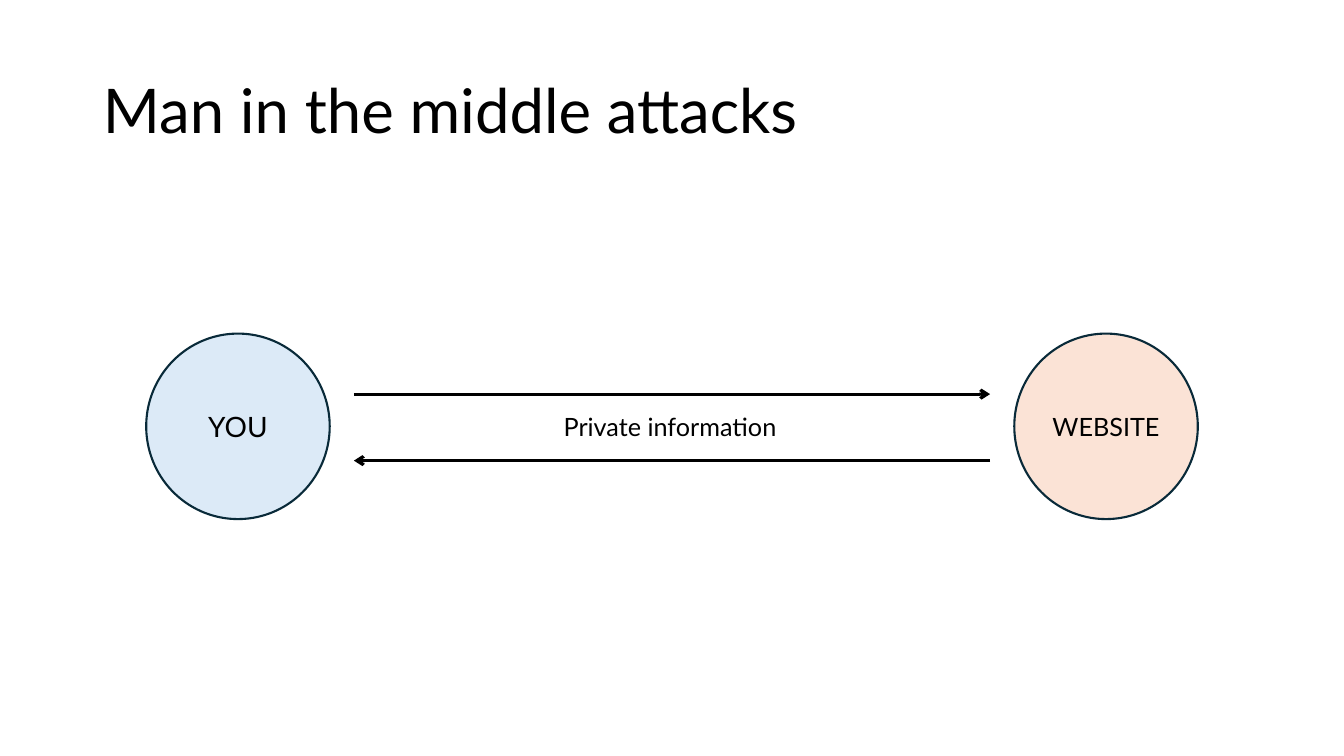
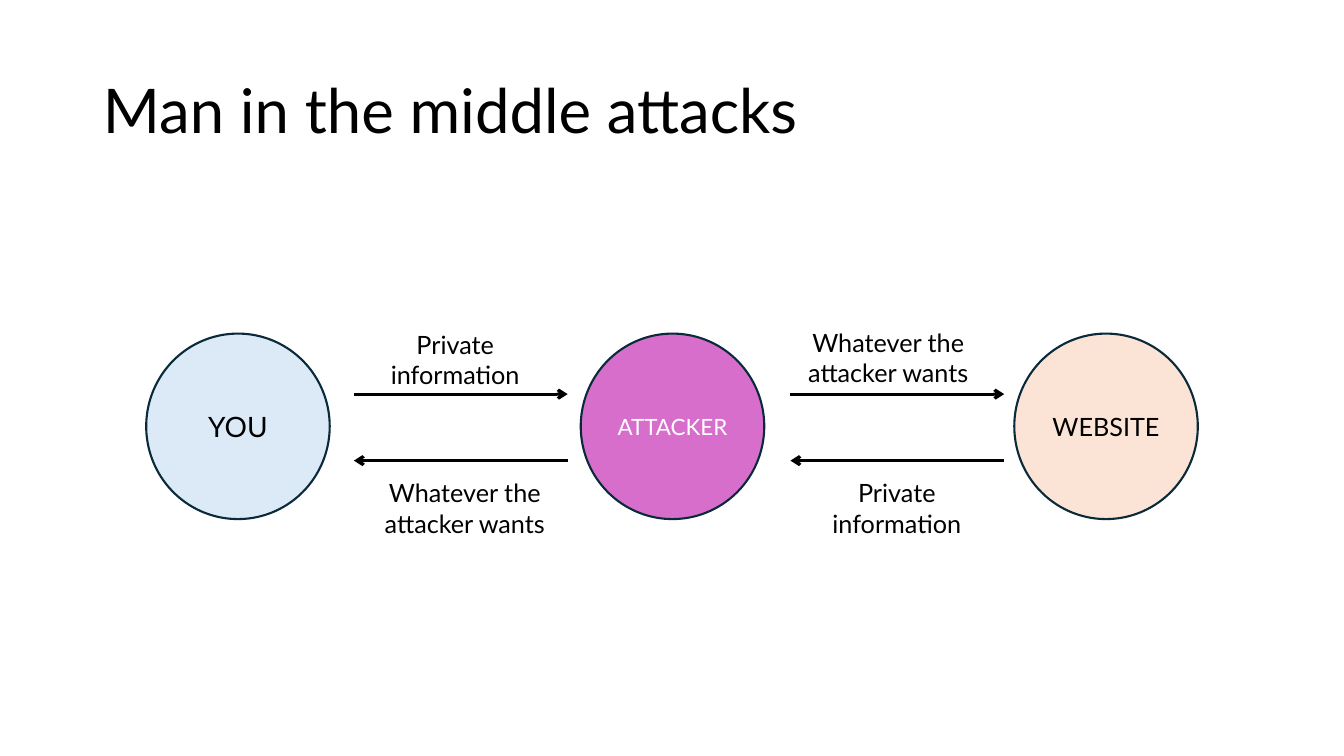
from lxml.etree import SubElement
from pptx import Presentation
from pptx.dml.color import RGBColor
from pptx.enum.shapes import MSO_CONNECTOR, MSO_SHAPE
from pptx.enum.text import MSO_ANCHOR, PP_ALIGN
from pptx.oxml.ns import qn
from pptx.util import Inches, Pt

COLORS = {
    "text": "000000",
    "light text": "FFFFFF",
    "outline": "092A39",
    "you": "DCEAF7",
    "website": "FBE3D6",
    "attacker": "D86ECC",
}
FONT = "Lato"
TITLE = "Man in the middle attacks"
PRIVATE = "Private information"
TAMPERED = "Whatever the attacker wants"
REQUEST_Y, REPLY_Y = 3.91, 4.57

# Parties: name, left, fill, font size, font colour
YOU = ("YOU", 1.45, "you", 20, "text")
WEBSITE = ("WEBSITE", 10.06, "website", 18, "text")
ATTACKER = ("ATTACKER", 5.76, "attacker", 16, "light text")

# Each slide: parties, channels (left, right), labels (text, left, top, width, height)
SLIDES = [
    (
        [YOU, WEBSITE],
        [(3.51, 9.82)],
        [(PRIVATE, 3.99, 4.03, 5.31, 0.4)],
    ),
    (
        [YOU, WEBSITE, ATTACKER],
        [(3.51, 5.63), (7.84, 9.96)],
        [
            (PRIVATE, 3.75, 3.22, 1.53, 0.71),
            (TAMPERED, 3.46, 4.69, 2.3, 0.71),
            (TAMPERED, 7.66, 3.2, 2.3, 0.71),
            (PRIVATE, 8.13, 4.69, 1.53, 0.71),
        ],
    ),
]


def write(frame, text, size, color="text", align=PP_ALIGN.CENTER):
    """Fill a text frame with one wrapped, formatted paragraph."""
    frame.word_wrap = True
    paragraph = frame.paragraphs[0]
    paragraph.text = text
    paragraph.alignment = align
    paragraph.font.name = FONT
    paragraph.font.size = Pt(size)
    paragraph.font.color.rgb = RGBColor.from_string(COLORS[color])
    return paragraph


def add_arrow(slide, start_x, end_x, y):
    arrow = slide.shapes.add_connector(
        MSO_CONNECTOR.STRAIGHT, Inches(start_x), Inches(y), Inches(end_x), Inches(y)
    )
    arrow.line.color.rgb = RGBColor.from_string(COLORS["text"])
    arrow.line.width = Pt(2.25)
    SubElement(arrow.line._get_or_add_ln(), qn("a:tailEnd"), type="arrow")
    SubElement(arrow._element.spPr, qn("a:effectLst"))


prs = Presentation()
prs.slide_width, prs.slide_height = Inches(13.33), Inches(7.5)
title_only = prs.slide_layouts[5]

for parties, channels, labels in SLIDES:
    slide = prs.slides.add_slide(title_only)
    title = slide.shapes.title
    title.left, title.top = Inches(0.92), Inches(0.4)
    title.width, title.height = Inches(11.5), Inches(1.45)
    title.text_frame.vertical_anchor = MSO_ANCHOR.MIDDLE
    write(title.text_frame, TITLE, 44, align=PP_ALIGN.LEFT).line_spacing = 0.9

    for name, left, fill, size, color in parties:
        party = slide.shapes.add_shape(
            MSO_SHAPE.OVAL, Inches(left), Inches(3.31), Inches(1.82), Inches(1.84)
        )
        party.shadow.inherit = False
        party.fill.solid()
        party.fill.fore_color.rgb = RGBColor.from_string(COLORS[fill])
        party.line.color.rgb = RGBColor.from_string(COLORS["outline"])
        party.line.width = Pt(1.5)
        party.text_frame.margin_left = party.text_frame.margin_right = 0
        party.text_frame.vertical_anchor = MSO_ANCHOR.MIDDLE
        write(party.text_frame, name, size, color)

    for left, right in channels:
        add_arrow(slide, left, right, REQUEST_Y)
        add_arrow(slide, right, left, REPLY_Y)

    for text, *box in labels:
        label = slide.shapes.add_textbox(*map(Inches, box))
        write(label.text_frame, text, 18)

prs.save("out.pptx")
